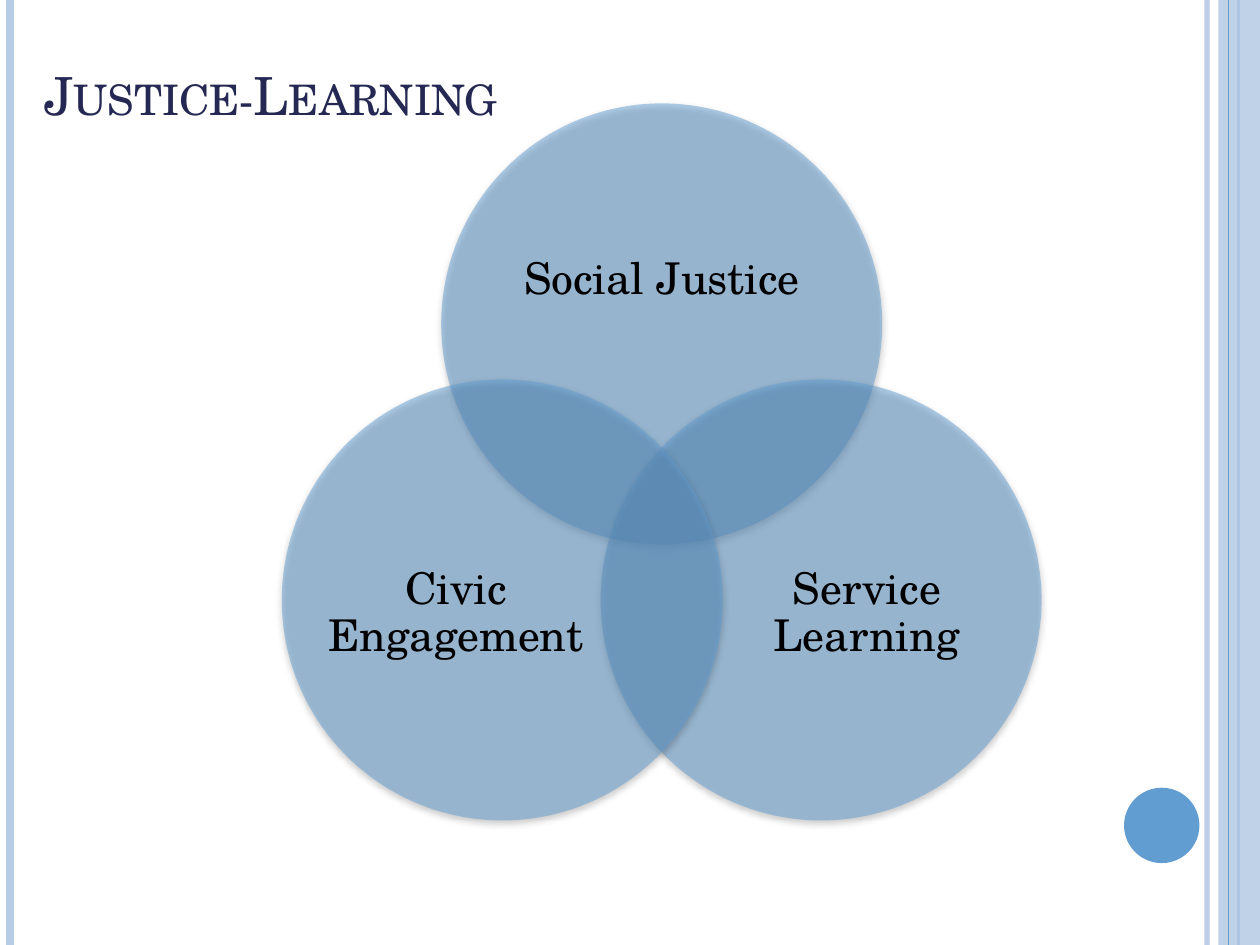
from math import cos, radians, sin

from lxml.etree import SubElement
from pptx import Presentation
from pptx.dml.color import RGBColor as Rgb
from pptx.enum.shapes import MSO_CONNECTOR as Link, MSO_SHAPE as Kind
from pptx.enum.text import MSO_ANCHOR as Anchor, MSO_AUTO_SIZE as Fit, PP_ALIGN as Align
from pptx.oxml.ns import qn
from pptx.util import Cm, Pt

WIDE, HIGH = 25.4, 19.05
FONT = "TeX Gyre Schola"
BLUE, PALE, NAVY, BLACK = "629DD1", "B7CCE5", "242852", "000000"

# Vertical lines: x, colour, width in points, opacity in percent
RULES = [
    (24.33, PALE, 3, 93),
    (0.2, PALE, 4.5, 100),
    (24.97, BLUE, 1.5, 100),
]
EDGE = (24.77, BLUE, 0.75, 100)

# Venn circles: angle around the centre, label, label box
MID_X, MID_Y, REACH, SIZE = 13.34, 10.24, 3.71, 8.89
RINGS = [
    (-90, "Social Justice", (10.08, 3.66, 6.53, 3.99)),
    (30, "Service Learning", (14.81, 9.93, 5.33, 4.9)),
    (150, "Civic Engagement", (6.53, 9.93, 5.33, 4.9)),
]


def paint(fill, hue, alpha=100):
    fill.solid()
    fill.fore_color.rgb = Rgb.from_string(hue)
    if alpha < 100:
        tint = fill._xPr.find(".//" + qn("a:srgbClr"))
        SubElement(tint, qn("a:alpha"), val=str(alpha * 1000))


def write(frame, text, size, hue, align=Align.LEFT, anchor=Anchor.MIDDLE,
          space=1.0, small=False):
    frame.word_wrap = True
    frame.auto_size = Fit.NONE
    frame.vertical_anchor = anchor
    para = frame.paragraphs[0]
    para.alignment = align
    para.line_spacing = space
    run = para.add_run()
    run.text = text
    run.font.name = FONT
    run.font.size = Pt(size)
    paint(run.font.fill, hue)
    if small:
        run.font._element.set("cap", "small")


def add_rule(slide, x, hue, width, alpha):
    rule = slide.shapes.add_connector(Link.STRAIGHT, Cm(x), 0, Cm(x), Cm(HIGH))
    rule.line.width = Pt(width)
    paint(rule.line.fill, hue, alpha)
    SubElement(rule._element.spPr, qn("a:effectLst"))


def add_shape(slide, kind, box, hue, alpha=100):
    shape = slide.shapes.add_shape(kind, *map(Cm, box))
    paint(shape.fill, hue, alpha)
    shape.line.fill.background()
    shape.shadow.inherit = False
    return shape


def add_shade(shape):
    effects = shape._element.spPr.find(qn("a:effectLst"))
    shade = SubElement(effects, qn("a:outerShdw"), blurRad=str(Pt(4)),
                       dist=str(Pt(2)), dir="5400000", rotWithShape="0")
    tint = SubElement(shade, qn("a:srgbClr"), val=BLACK)
    SubElement(tint, qn("a:alpha"), val="40000")


def add_label(slide, text, box):
    frame = slide.shapes.add_textbox(*map(Cm, box)).text_frame
    frame.margin_left = frame.margin_right = 0
    frame.margin_top = frame.margin_bottom = 0
    write(frame, text, 25, BLACK, align=Align.CENTER, space=0.9)


def add_ring(slide, angle, text, box):
    turn = radians(angle)
    left = MID_X + REACH * cos(turn) - SIZE / 2
    top = MID_Y + REACH * sin(turn) - SIZE / 2
    add_shade(add_shape(slide, Kind.OVAL, (left, top, SIZE, SIZE), BLUE, 50))
    add_label(slide, text, box)


def add_title(slide, text):
    title = slide.shapes.title
    title.left, title.top = Cm(0.64), Cm(0.43)
    title.width, title.height = Cm(21.59), Cm(2.24)
    write(title.text_frame, text, 30, NAVY, anchor=Anchor.BOTTOM, small=True)


def main():
    deck = Presentation()
    deck.slide_width, deck.slide_height = Cm(WIDE), Cm(HIGH)
    slide = deck.slides.add_slide(deck.slide_layouts[5])

    # Side decoration
    for rule in RULES:
        add_rule(slide, *rule)
    add_shape(slide, Kind.RECTANGLE, (24.56, 0, 0.84, HIGH), PALE, 87)
    add_rule(slide, *EDGE)
    add_shape(slide, Kind.OVAL, (22.66, 15.88, 1.52, 1.52), BLUE)

    # Venn diagram
    for ring in RINGS:
        add_ring(slide, *ring)

    add_title(slide, "Justice-Learning")
    deck.save("out.pptx")


if __name__ == "__main__":
    main()
